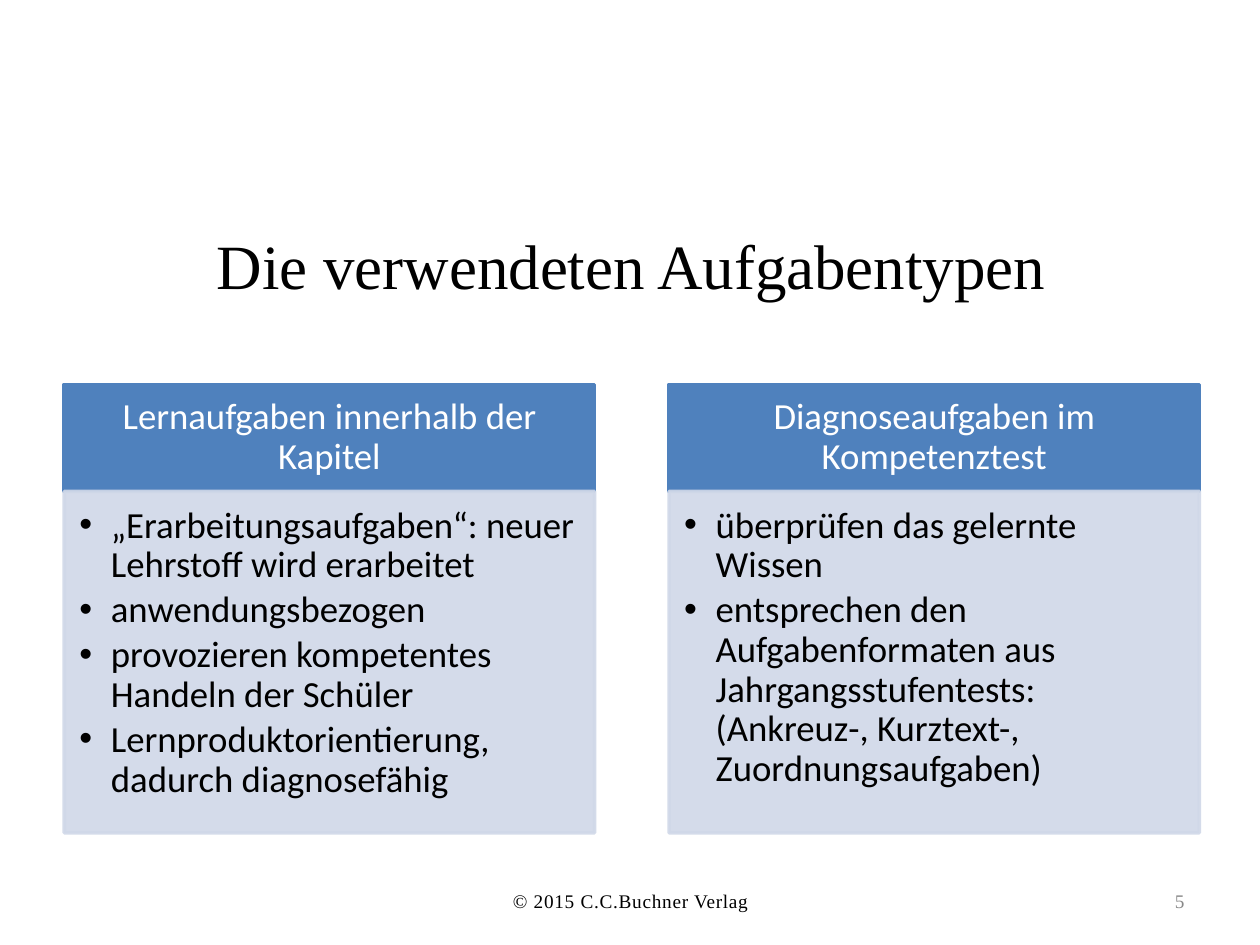
from dataclasses import dataclass

from lxml import etree
from pptx import Presentation
from pptx.dml.color import RGBColor
from pptx.enum.shapes import MSO_SHAPE
from pptx.enum.text import MSO_ANCHOR, PP_ALIGN
from pptx.oxml.ns import qn
from pptx.util import Inches, Pt

RECTANGLE = MSO_SHAPE.RECTANGLE
TOP, MIDDLE = MSO_ANCHOR.TOP, MSO_ANCHOR.MIDDLE
LEFT, CENTER, RIGHT = PP_ALIGN.LEFT, PP_ALIGN.CENTER, PP_ALIGN.RIGHT


@dataclass(frozen=True)
class Theme:
    serif: str = "Times New Roman"
    sans: str = "Calibri"
    black: str = "000000"
    white: str = "FFFFFF"
    grey: str = "898989"
    header: str = "4F81BD"
    body: str = "D0D8E8"
    title_size: float = 36
    panel_size: float = 21
    footer_size: float = 11


@dataclass(frozen=True)
class Box:
    left: float
    top: float
    width: float
    height: float

    def lengths(self) -> tuple:
        return tuple(Inches(value) for value in (self.left, self.top, self.width, self.height))


@dataclass(frozen=True)
class Panel:
    heading: str
    points: tuple[str, ...]


THEME = Theme()
SLIDE_WIDTH, SLIDE_HEIGHT = 10, 7.5
MARGIN, COLUMN_WIDTH, COLUMN_PITCH = 0.51, 4.21, 4.8
PANEL_TOP, HEADER_HEIGHT, BODY_HEIGHT = 3.05, 0.85, 2.71
FOOTER_TOP, FOOTER_HEIGHT = 6.95, 0.4
HANGING_INDENT = 0.25
DEFAULT_INSETS = (0.1, 0.05, 0.1, 0.05)

PANELS = (
    Panel("Lernaufgaben innerhalb der Kapitel", (
        "„Erarbeitungsaufgaben“: neuer Lehrstoff wird erarbeitet",
        "anwendungsbezogen",
        "provozieren kompetentes Handeln der Schüler",
        "Lernproduktorientierung, dadurch diagnosefähig",
    )),
    Panel("Diagnoseaufgaben im Kompetenztest", (
        "überprüfen das gelernte Wissen",
        "entsprechen den Aufgabenformaten aus Jahrgangsstufentests: "
        "(Ankreuz-, Kurztext-, Zuordnungsaufgaben)",
    )),
)


def add_bullet(paragraph) -> None:
    properties = paragraph._p.get_or_add_pPr()
    properties.set("marL", str(Inches(HANGING_INDENT)))
    properties.set("indent", str(-Inches(HANGING_INDENT)))
    etree.SubElement(properties, qn("a:buFont"), typeface="Arial")
    etree.SubElement(properties, qn("a:buChar"), char="•")


def write_text(shape, *texts: str, font: str, size: float, color: str,
               align=LEFT, anchor=MIDDLE, insets=DEFAULT_INSETS, bullets: bool = False,
               line_spacing: float = 1.0, space_after: float = 0, tracking: float = 0) -> None:
    frame = shape.text_frame
    frame.word_wrap = True
    frame.vertical_anchor = anchor
    (frame.margin_left, frame.margin_top,
     frame.margin_right, frame.margin_bottom) = map(Inches, insets)
    for index, text in enumerate(texts):
        paragraph = frame.paragraphs[0] if index == 0 else frame.add_paragraph()
        paragraph.alignment = align
        paragraph.line_spacing = line_spacing
        paragraph.space_after = Pt(space_after)
        if bullets:
            add_bullet(paragraph)
        run = paragraph.add_run()
        run.text = text
        run.font.name = font
        run.font.size = Pt(size)
        run.font.color.rgb = RGBColor.from_string(color)
        if tracking:
            run._r.get_or_add_rPr().set("spc", str(round(tracking * 100)))


def add_rectangle(slide, box: Box, color: str, opacity: int = 100):
    shape = slide.shapes.add_shape(RECTANGLE, *box.lengths())
    shape.shadow.inherit = False
    shape.fill.solid()
    shape.fill.fore_color.rgb = RGBColor.from_string(color)
    shape.line.color.rgb = RGBColor.from_string(color)
    shape.line.width = Pt(2)
    if opacity < 100:
        for solid_color in shape._element.spPr.iter(qn("a:srgbClr")):
            etree.SubElement(solid_color, qn("a:alpha"), val=str(opacity * 1000))
    return shape


def add_panel(slide, panel: Panel, column: int) -> None:
    left = MARGIN + column * COLUMN_PITCH
    header = add_rectangle(slide, Box(left, PANEL_TOP, COLUMN_WIDTH, HEADER_HEIGHT), THEME.header)
    write_text(header, panel.heading, font=THEME.sans, size=THEME.panel_size, color=THEME.white,
               align=CENTER, insets=(0.16, 0.09, 0.16, 0.09), line_spacing=0.9)
    body_box = Box(left, PANEL_TOP + HEADER_HEIGHT, COLUMN_WIDTH, BODY_HEIGHT)
    body = add_rectangle(slide, body_box, THEME.body, opacity=90)
    write_text(body, *panel.points, font=THEME.sans, size=THEME.panel_size, color=THEME.black,
               anchor=TOP, insets=(0.12, 0.12, 0.16, 0.18), bullets=True,
               line_spacing=0.9, space_after=3)


def add_label(slide, box: Box, text: str, **text_format) -> None:
    write_text(slide.shapes.add_textbox(*box.lengths()), text, font=THEME.serif, **text_format)


def main() -> None:
    presentation = Presentation()
    presentation.slide_width = Inches(SLIDE_WIDTH)
    presentation.slide_height = Inches(SLIDE_HEIGHT)
    slide = presentation.slides.add_slide(presentation.slide_layouts[6])

    add_label(slide, Box(MARGIN, 1.47, 0.9 * SLIDE_WIDTH, SLIDE_HEIGHT / 6),
              "Die verwendeten Aufgabentypen",
              size=THEME.title_size, color=THEME.black, align=CENTER)
    for column, panel in enumerate(PANELS):
        add_panel(slide, panel, column)
    add_label(slide, Box(3.42, FOOTER_TOP, 3.17, FOOTER_HEIGHT), "© 2015 C.C.Buchner Verlag",
              size=THEME.footer_size, color=THEME.black, align=CENTER, tracking=0.4)
    add_label(slide, Box(7.17, FOOTER_TOP, 2.33, FOOTER_HEIGHT), "5",
              size=THEME.footer_size, color=THEME.grey, align=RIGHT)
    presentation.save("out.pptx")


if __name__ == "__main__":
    main()
